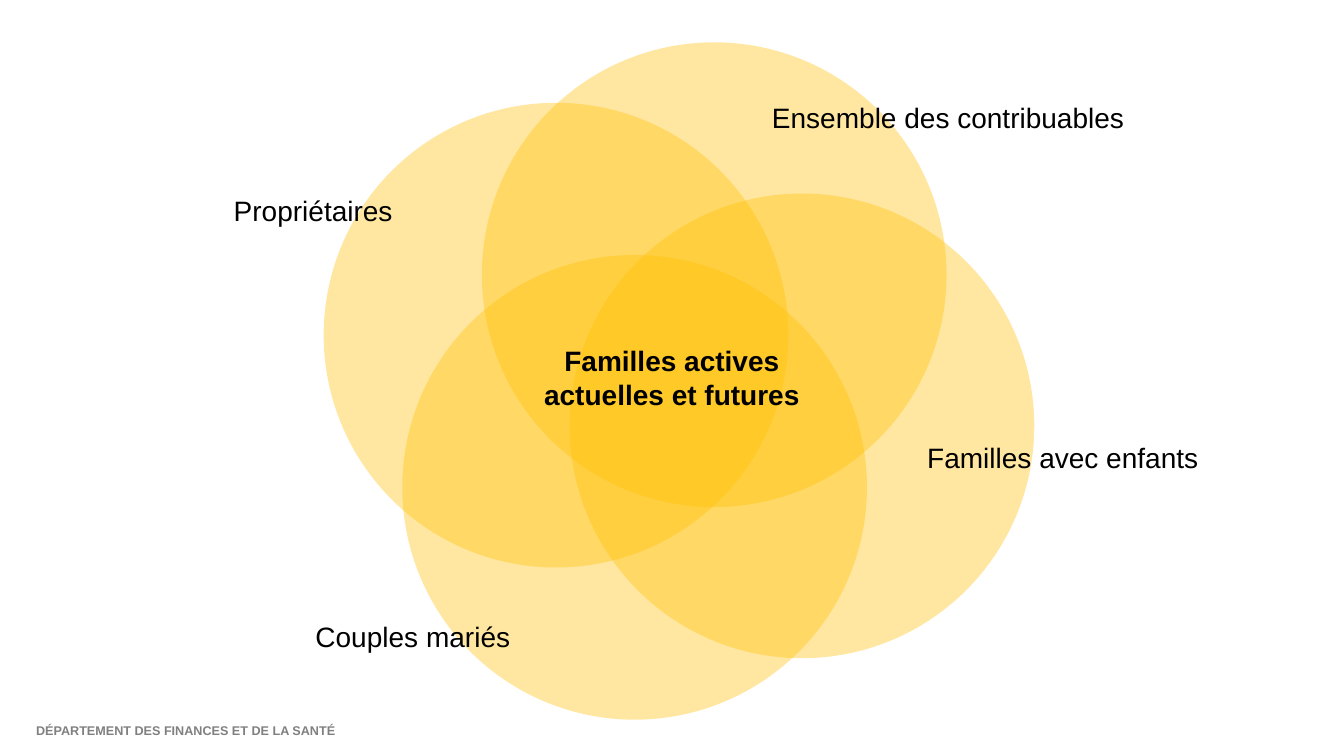
from dataclasses import dataclass

from lxml import etree
from pptx import Presentation
from pptx.dml.color import RGBColor
from pptx.enum.shapes import MSO_SHAPE
from pptx.enum.text import MSO_ANCHOR, MSO_AUTO_SIZE, PP_ALIGN
from pptx.oxml.ns import qn
from pptx.util import Inches, Pt

ELLIPSE = MSO_SHAPE.OVAL
TOP, BOTTOM = MSO_ANCHOR.TOP, MSO_ANCHOR.BOTTOM
LEFT, CENTER = PP_ALIGN.LEFT, PP_ALIGN.CENTER
FIT_SHAPE, NO_FIT = MSO_AUTO_SIZE.SHAPE_TO_FIT_TEXT, MSO_AUTO_SIZE.NONE


@dataclass(frozen=True)
class Theme:
    font: str = "Arial"
    ink: str = "000000"
    footer_ink: str = "808080"
    circle: str = "FFC000"
    circle_opacity: int = 37
    label_size: int = 20
    footer_size: int = 9


THEME = Theme()
WIDTH, HEIGHT = Inches(13.333), Inches(7.5)
COLUMN, ROW = WIDTH / 100, HEIGHT / 100
DIAMETER = 61.47 * ROW
TILT = 20.4
LINE_ROWS = 5.87

AUDIENCES = [
    ("Familles avec enfants", (42.38, 25.6), (68.25, 57.6, 21.83)),
    ("Couples mariés", (29.93, 33.73), (22.73, 81.33, 16.13)),
    ("Ensemble des contribuables", (35.85, 5.6), (56.7, 12.67, 27.98)),
    ("Propriétaires", (24.08, 13.6), (16.65, 24.93, 13.43)),
]


def add_text(shapes, text, area, *, size=THEME.label_size, color=THEME.ink,
             bold=False, align=LEFT, anchor=TOP, wrap=False):
    column, row, columns, rows = area
    box = shapes.add_textbox(round(column * COLUMN), round(row * ROW),
                             round(columns * COLUMN), round(rows * ROW))
    frame = box.text_frame
    frame.text = text
    frame.word_wrap = wrap
    frame.auto_size = NO_FIT if wrap else FIT_SHAPE
    frame.vertical_anchor = anchor
    for paragraph in frame.paragraphs:
        paragraph.alignment = align
        font = paragraph.runs[0].font
        font.name = THEME.font
        font.size = Pt(size)
        font.bold = bold
        font.color.rgb = RGBColor.from_string(color)


def add_circle(shapes, column, row):
    circle = shapes.add_shape(ELLIPSE, round(column * COLUMN), round(row * ROW),
                              round(DIAMETER), round(DIAMETER))
    circle.rotation = TILT
    circle.shadow.inherit = False
    circle.line.fill.background()
    circle.fill.solid()
    circle.fill.fore_color.rgb = RGBColor.from_string(THEME.circle)
    color = circle.fill._xPr.find(f".//{qn('a:srgbClr')}")
    etree.SubElement(color, qn("a:alpha"), val=str(THEME.circle_opacity * 1000))


def add_audience(slide, label, circle_origin, label_area):
    audience = slide.shapes.add_group_shape()
    add_circle(audience.shapes, *circle_origin)
    add_text(audience.shapes, label, (*label_area, LINE_ROWS))


def main():
    deck = Presentation()
    deck.slide_width, deck.slide_height = WIDTH, HEIGHT
    slide = deck.slides.add_slide(deck.slide_layouts[6])
    add_text(slide.shapes, "DÉPARTEMENT DES FINANCES ET DE LA SANTÉ",
             (1.95, 92.93, 81.08, 5.33), size=THEME.footer_size,
             color=THEME.footer_ink, bold=True, anchor=BOTTOM, wrap=True)
    for label, circle_origin, label_area in AUDIENCES:
        add_audience(slide, label, circle_origin, label_area)
    add_text(slide.shapes, "Familles actives\nactuelles et futures",
             (39.68, 44.8, 20.63, 10.27), bold=True, align=CENTER)
    deck.save("out.pptx")


if __name__ == "__main__":
    main()
